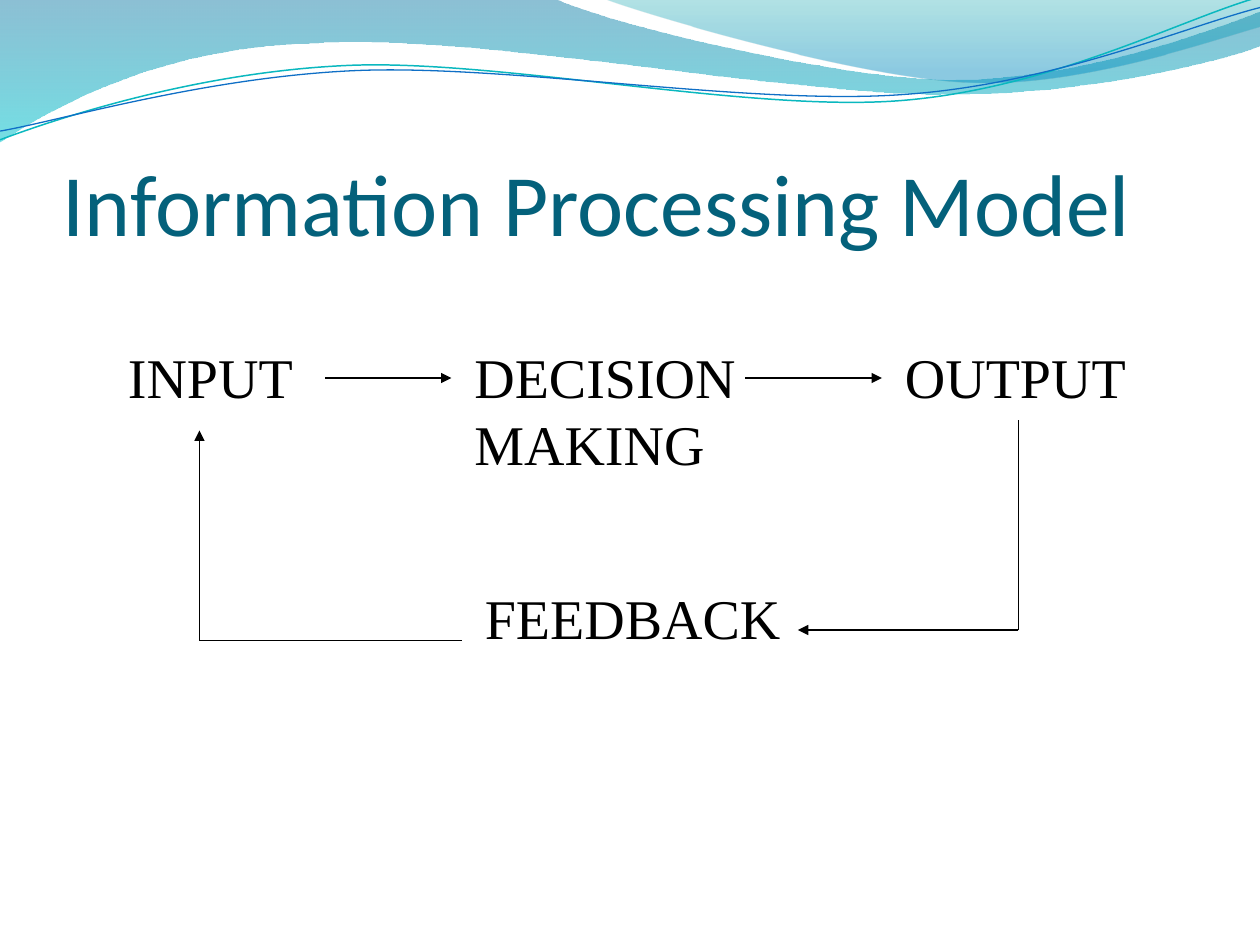
from lxml import etree
from pptx import Presentation
from pptx import util as u
from pptx.dml.color import RGBColor
from pptx.enum import shapes, text
from pptx.oxml.ns import qn

# Content: all lengths in points
TITLE = "Information Processing Model"
STAGES = [  # wording, left, top, width, height
    ("INPUT", 66, 192, 168, 45),
    ("DECISION MAKING", 264, 192, 174, 84),
    ("OUTPUT", 510, 192, 168, 45),
    ("FEEDBACK", 270, 330, 186, 45),
]
FLOWS = [  # start, end, arrowhead at the end
    ((186, 216), (258, 216), True),
    ((426, 216), (504, 216), True),
    ((114, 366), (114, 246), True),
    ((114, 366), (264, 366), False),
    ((582, 360), (456, 360), True),
    ((582, 360), (582, 240), False),
]
# Waves: a start point, then steps of one point (straight) or three (Bezier)
BANDS = [  # start, steps, gradient stops (position, colour, opacity %)
    ((0, 0), [
        [(317, -0.7)],
        [(342.7, 12.2), (478, 45.4), (545.8, 45.4)],
        [(614.2, 45.4), (689.8, 18.7), (720, 6.5)],
        [(720.7, 26)],
        [(707.8, 31.7), (626.4, 54.7), (537.1, 54)],
        [(447.8, 54), (275, 20.2), (185, 24.5)],
        [(92.9, 26), (33.1, 59.8), (-0.7, 81.4)],
    ], [(0, "0074A1", 45), (1, "00C6CF", 55)]),
    ((344.9, -0.7), [
        [(366.5, 7.9), (491, 44.6), (553.7, 46.8)],
        [(616.3, 49.7), (691.9, 23), (720, 15.1)],
        [(720, 0)],
    ], [(0, "00A1A9", 30), (0.8, "008BBF", 45)]),
]
STRANDS = [  # start, steps, colour, width
    ((0, 79.9), [
        [(34.6, 67), (113.8, 41), (199.4, 37.4)],
        [(284.4, 33.8), (427, 64.1), (513.4, 57.6)],
        [(599.8, 51.1), (675.4, 10.8), (718.6, -1.4)],
    ], "0AB8BF", 0.85),
    ((0, 74.9), [
        [(33.8, 69.1), (118.1, 43.9), (203.8, 40.3)],
        [(290.2, 36.7), (429.8, 60.5), (516.2, 54)],
        [(601.9, 48.2), (677.5, 15.1), (720, 4.3)],
    ], "0F6FC6", 0.75),
]


def rgb(value):
    return RGBColor.from_string(value)


def add_wave(slide, start, steps, close):
    builder = slide.shapes.build_freeform(u.Pt(start[0]), u.Pt(start[1]))
    builder.add_line_segments([(u.Pt(x), u.Pt(y)) for step in steps for x, y in step],
                              close=close)
    wave = builder.convert_to_shape()
    wave.shadow.inherit = False
    # Join each run of three points into one Bezier step
    corners = iter(list(wave._element.spPr.iter(qn("a:lnTo"))))
    for step in steps:
        first, *others = [next(corners) for _ in step]
        if others:
            curve = etree.Element(qn("a:cubicBezTo"))
            first.addprevious(curve)
            for corner in (first, *others):
                curve.append(corner[0])
                corner.getparent().remove(corner)
    return wave


def add_band(slide, start, steps, stops):
    band = add_wave(slide, start, steps, True)
    band.line.fill.background()
    band.fill.gradient()
    band.fill.gradient_angle = 270
    for stop, (position, colour, _) in zip(band.fill.gradient_stops, stops):
        stop.position = position
        stop.color.rgb = rgb(colour)
    for tone, (_, _, opacity) in zip(band._element.spPr.iter(qn("a:srgbClr")), stops):
        etree.SubElement(tone, qn("a:alpha"), val=str(opacity * 1000))


def add_strand(slide, start, steps, colour, width):
    strand = add_wave(slide, start, steps, False)
    strand.fill.background()
    strand.line.color.rgb = rgb(colour)
    strand.line.width = u.Pt(width)


def add_label(slide, wording, place, font, size, colour):
    label = slide.shapes.add_textbox(*(u.Pt(v) for v in place))
    frame = label.text_frame
    frame.word_wrap = True
    frame.text = wording
    run = frame.paragraphs[0].runs[0]
    run.font.name = font
    run.font.size = u.Pt(size)
    run.font.color.rgb = rgb(colour)
    return frame


def add_stage(slide, wording, *place):
    frame = add_label(slide, wording, place, "Times New Roman", 32, "000000")
    frame.auto_size = text.MSO_AUTO_SIZE.SHAPE_TO_FIT_TEXT
    # Space before, as a share of the line
    before = etree.SubElement(frame.paragraphs[0]._p.get_or_add_pPr(), qn("a:spcBef"))
    etree.SubElement(before, qn("a:spcPct"), val="50000")


def add_flow(slide, start, end, arrow):
    flow = slide.shapes.add_connector(shapes.MSO_CONNECTOR.STRAIGHT,
                                      *(u.Pt(v) for v in start + end))
    flow.line.color.rgb = rgb("000000")
    flow.line.width = u.Pt(0.75)
    if arrow:
        etree.SubElement(flow.line._get_or_add_ln(), qn("a:tailEnd"), type="triangle")
    etree.SubElement(flow._element.spPr, qn("a:effectLst"))


def main():
    deck = Presentation()
    deck.slide_width, deck.slide_height = u.Pt(720), u.Pt(540)
    slide = deck.slides.add_slide(deck.slide_layouts[6])

    # Wave decoration
    for band in BANDS:
        add_band(slide, *band)
    for strand in STRANDS:
        add_strand(slide, *strand)

    # Title
    title = add_label(slide, TITLE, (36, 55.2, 654, 90), "Calibri", 50, "04617B")
    title.vertical_anchor = text.MSO_ANCHOR.BOTTOM
    title.margin_left = title.margin_right = title.margin_bottom = 0

    # Feedback loop
    for stage in STAGES:
        add_stage(slide, *stage)
    for flow in FLOWS:
        add_flow(slide, *flow)

    deck.save("out.pptx")


if __name__ == "__main__":
    main()
